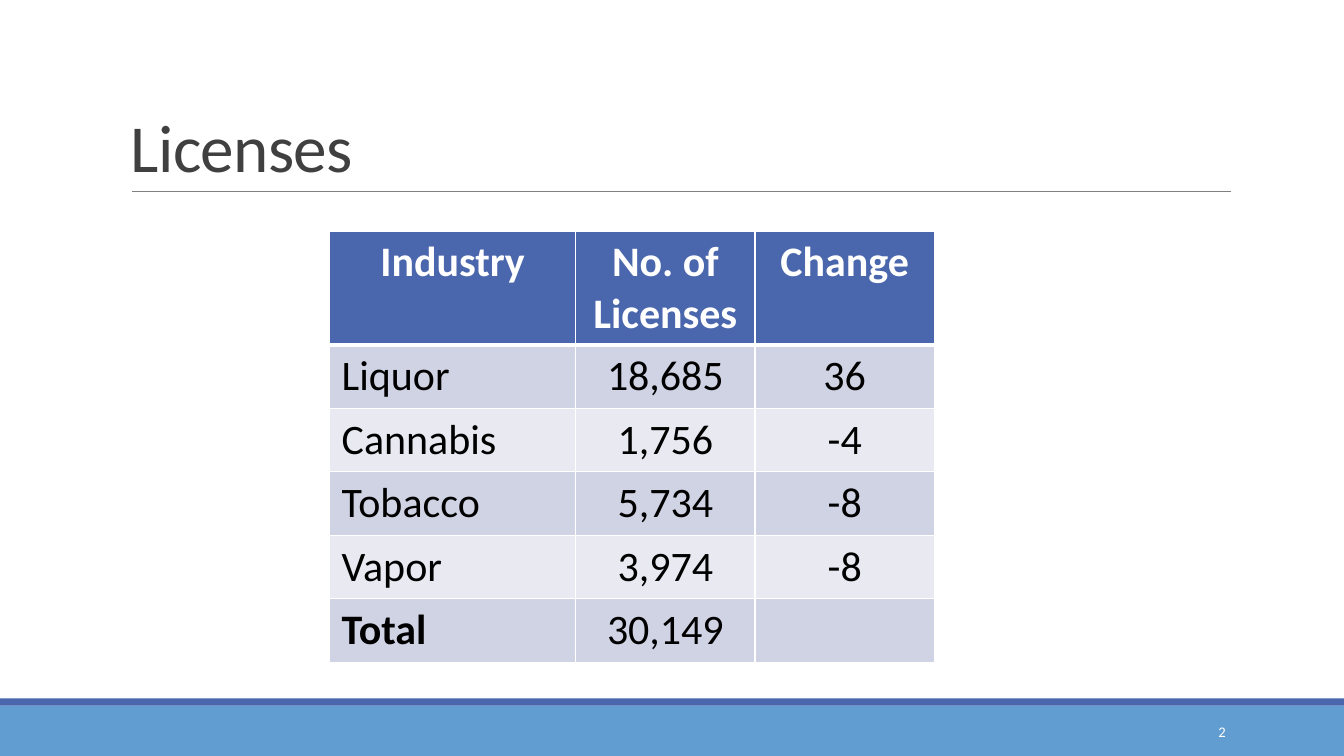
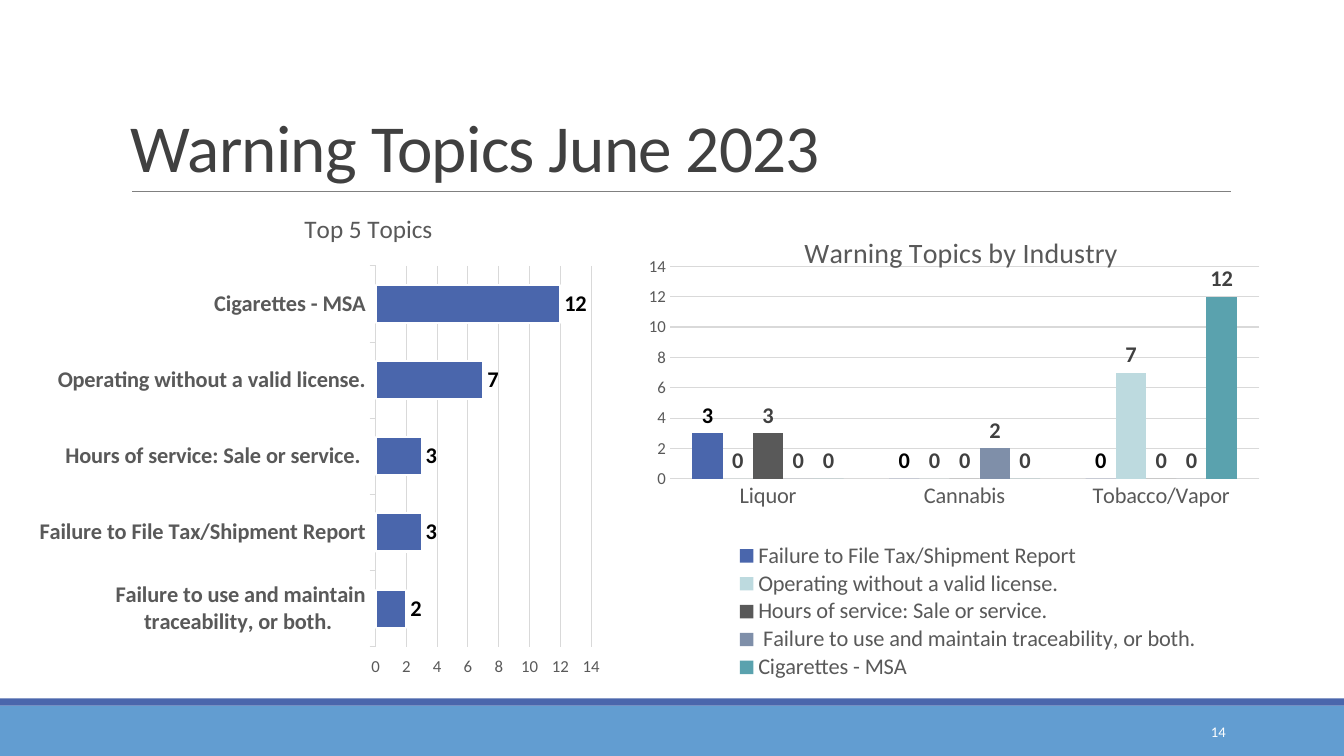
from lxml import etree
from pptx import Presentation
from pptx.chart.data import CategoryChartData
from pptx.dml.color import RGBColor
from pptx.enum.chart import XL_CHART_TYPE as CT, XL_LABEL_POSITION as LABEL_POS
from pptx.enum.chart import XL_LEGEND_POSITION as LEGEND_POS, XL_TICK_MARK as TICK
from pptx.enum.shapes import MSO_CONNECTOR, MSO_SHAPE
from pptx.enum.text import MSO_ANCHOR as ANCHOR, PP_ALIGN as ALIGN
from pptx.oxml.ns import qn
from pptx.util import Cm, Pt

# Shared look
FONT = "Calibri"
WIDTH, HEIGHT = 33.87, 19.05
BLUE, SKY, WHITE, BLACK = "4A66AC", "629DD1", "FFFFFF", "000000"
DARK, GREY, RULE, GRID = "404040", "595959", "808080", "D9D9D9"
BANDS = ("D0D3E3", "E9EAF1")

# Warning topics
FILING = "Failure to File Tax/Shipment Report"
NO_LICENSE = "Operating without a valid license."
HOURS = "Hours of service: Sale or service. "
TRACEABILITY = " Failure to use and maintain traceability, or both."
CIGARETTES = "Cigarettes - MSA"


def rgb(color):
    return RGBColor.from_string(color)


def box(*lengths):
    return [Cm(n) for n in lengths]


def set_font(font, size, color, bold=False):
    font.name, font.size, font.bold = FONT, Pt(size), bold
    font.color.rgb = rgb(color)


def set_fill(fill, color):
    fill.solid()
    fill.fore_color.rgb = rgb(color)


def set_line(line, color, width):
    line.color.rgb = rgb(color)
    line.width = Pt(width)


# Slide furniture
def add_band(slide, top, height, color):
    sp = slide.shapes.add_shape(MSO_SHAPE.RECTANGLE, *box(0, top, WIDTH, height))
    sp.shadow.inherit = False
    set_fill(sp.fill, color)
    sp.line.fill.background()


def add_rule(slide, left, right, y):
    line = slide.shapes.add_connector(MSO_CONNECTOR.STRAIGHT, *box(left, y, right, y))
    set_line(line.line, RULE, 0.5)
    etree.SubElement(line._element.spPr, qn("a:effectLst"))


def add_text(slide, text, place, size, color, anchor, align=ALIGN.LEFT):
    tf = slide.shapes.add_textbox(*box(*place)).text_frame
    tf.word_wrap = True
    tf.vertical_anchor = anchor
    p = tf.paragraphs[0]
    p.text, p.alignment = text, align
    set_font(p.font, size, color)
    return p


def add_slide(prs, title, number):
    slide = prs.slides.add_slide(prs.slide_layouts[6])
    add_band(slide, 17.78, 1.27, SKY)
    add_band(slide, 17.6, 0.18, BLUE)
    add_rule(slide, 3.33, 31.01, 4.83)
    p = add_text(slide, title, (3.05, 0.79, 27.94, 4.04), 48, DARK, ANCHOR.BOTTOM)
    p.line_spacing = 0.85
    p.runs[0]._r.get_or_add_rPr().set("spc", "-50")
    add_text(slide, str(number), (27.51, 17.93, 3.63, 1.02), 10.5, WHITE,
             ANCHOR.MIDDLE, ALIGN.RIGHT)
    return slide


# Table
def set_borders(cell, bottom):
    tcPr = cell._tc.get_or_add_tcPr()
    for side, width in (("lnL", 1), ("lnR", 1), ("lnB", bottom)):
        ln = etree.SubElement(tcPr, qn("a:" + side), w=str(Pt(width)))
        fill = etree.SubElement(ln, qn("a:solidFill"))
        etree.SubElement(fill, qn("a:srgbClr"), val=WHITE)


def fill_cell(cell, text, row, col):
    header = row == 0
    set_borders(cell, 3 if header else 1)
    set_fill(cell.fill, BLUE if header else BANDS[(row - 1) % 2])
    cell.margin_left = cell.margin_right = Cm(0.3)
    cell.margin_top = cell.margin_bottom = Cm(0.15)
    p = cell.text_frame.paragraphs[0]
    p.text = text
    p.alignment = ALIGN.CENTER if header or col else ALIGN.LEFT
    set_font(p.font, 30, WHITE if header else BLACK, header or text == "Total")


def add_table(slide, left, top, widths, rows, header_height, row_height):
    height = header_height + row_height * (len(rows) - 1)
    table = slide.shapes.add_table(
        len(rows), len(widths), *box(left, top, sum(widths), height)).table
    for column, width in zip(table.columns, widths):
        column.width = Cm(width)
    for i, values in enumerate(rows):
        table.rows[i].height = Cm(row_height if i else header_height)
        for j, text in enumerate(values):
            fill_cell(table.cell(i, j), text, i, j)


# Charts
def set_layout(element, inner=False, **fractions):
    """Place a chart part by fractions of the chart area."""
    for old in element.findall(qn("c:layout")):
        element.remove(old)
    before = [e for e in element if e.tag in (qn("c:tx"), qn("c:legendPos"))]
    layout = etree.Element(qn("c:layout"))
    element.insert(len(before), layout)
    manual = etree.SubElement(layout, qn("c:manualLayout"))
    settings = {"layoutTarget": "inner"} if inner else {}
    settings.update(xMode="edge", yMode="edge", **fractions)
    for name, value in settings.items():
        etree.SubElement(manual, qn("c:" + name), val=str(value))


def style_axes(chart, bold, tick):
    cat, val = chart.category_axis, chart.value_axis
    set_font(cat.tick_labels.font, 16, GREY, bold)
    set_font(val.tick_labels.font, 12, GREY)
    cat.major_tick_mark = val.major_tick_mark = tick
    cat.has_major_gridlines = False
    cat.format.line.fill.background()
    val.format.line.fill.background()
    val.minimum_scale, val.maximum_scale, val.major_unit = 0, 14, 2
    set_line(val.major_gridlines.format.line, GRID, 0.75)


def add_chart(slide, kind, place, title, size, title_at, cats, series, gap, plot_at,
              bold=False, tick=TICK.NONE):
    """Draw a clustered chart; series holds (name, values, color, label color)."""
    data = CategoryChartData()
    data.categories = cats
    for name, values, *_ in series:
        data.add_series(name, values)
    chart = slide.shapes.add_chart(kind, *box(*place), data).chart
    set_font(chart.font, 10, BLACK)
    chart.has_legend = False
    chart.has_title = True
    p = chart.chart_title.text_frame.paragraphs[0]
    p.text = title
    set_font(p.font, size, GREY)
    set_layout(chart.chart_title._element, **title_at)
    set_layout(chart.element.find(".//" + qn("c:plotArea")), inner=True, **plot_at)
    style_axes(chart, bold, tick)
    plot = chart.plots[0]
    plot.gap_width, plot.overlap, plot.vary_by_categories = gap, 0, False
    for ser, (_, _, color, label_color) in zip(plot.series, series):
        set_fill(ser.format.fill, color)
        labels = ser.data_labels
        labels.show_value = True
        labels.position = LABEL_POS.OUTSIDE_END
        set_font(labels.font, 16, label_color, True)
    return chart


def add_legend(chart, **fractions):
    chart.has_legend = True
    chart.legend.position = LEGEND_POS.BOTTOM
    chart.legend.include_in_layout = False
    set_font(chart.legend.font, 16, GREY)
    set_layout(chart.legend._element, **fractions)


# Slides
def licenses_slide(prs):
    slide = add_slide(prs, "Licenses", 2)
    rows = [
        ("Industry", "No. of Licenses", "Change"),
        ("Liquor", "18,685", "36"),
        ("Cannabis", "1,756", "-4"),
        ("Tobacco", "5,734", "-8"),
        ("Vapor", "3,974", "-8"),
        ("Total", "30,149", ""),
    ]
    add_table(slide, 8.31, 5.82, (6.2, 4.52, 4.52), rows, 2.87, 1.6)


def warnings_slide(prs):
    slide = add_slide(prs, "Warning Topics June 2023", 14)
    top = add_chart(
        slide, CT.BAR_CLUSTERED, (0.66, 4.83, 14.68, 12.47),
        "Top 5 Topics", 18, dict(x=0.47, y=0.03),
        (TRACEABILITY, FILING, HOURS, NO_LICENSE, CIGARETTES),
        [("Series 1", (2, 3, 3, 7, 12), BLUE, BLACK)],
        100, dict(x=0.6, y=0.15, w=0.37, h=0.77), bold=True, tick=TICK.OUTSIDE)
    set_line(top.category_axis.format.line, GRID, 0.75)
    set_line(top.plots[0].series[0].format.line, WHITE, 1.5)

    industry = add_chart(
        slide, CT.COLUMN_CLUSTERED, (15.9, 5.13, 16.33, 12.17),
        "Warning Topics by Industry", 20, dict(x=0.26, y=0.05),
        ("Liquor", "Cannabis", "Tobacco/Vapor"),
        [(FILING, (3, 0, 0), BLUE, BLACK),
         (NO_LICENSE, (0, 0, 7), "BDDADF", DARK),
         (HOURS, (3, 0, 0), GREY, DARK),
         (TRACEABILITY, (0, 2, 0), "7F8FA9", DARK),
         (CIGARETTES, (0, 0, 12), "5AA2AE", DARK)],
        150, dict(x=0.06, y=0.13, w=0.91, h=0.44))
    add_legend(industry, x=0.15, y=0.7, w=0.74, h=0.29)


def main():
    prs = Presentation()
    prs.slide_width, prs.slide_height = box(WIDTH, HEIGHT)
    licenses_slide(prs)
    warnings_slide(prs)
    prs.save("out.pptx")


if __name__ == "__main__":
    main()
